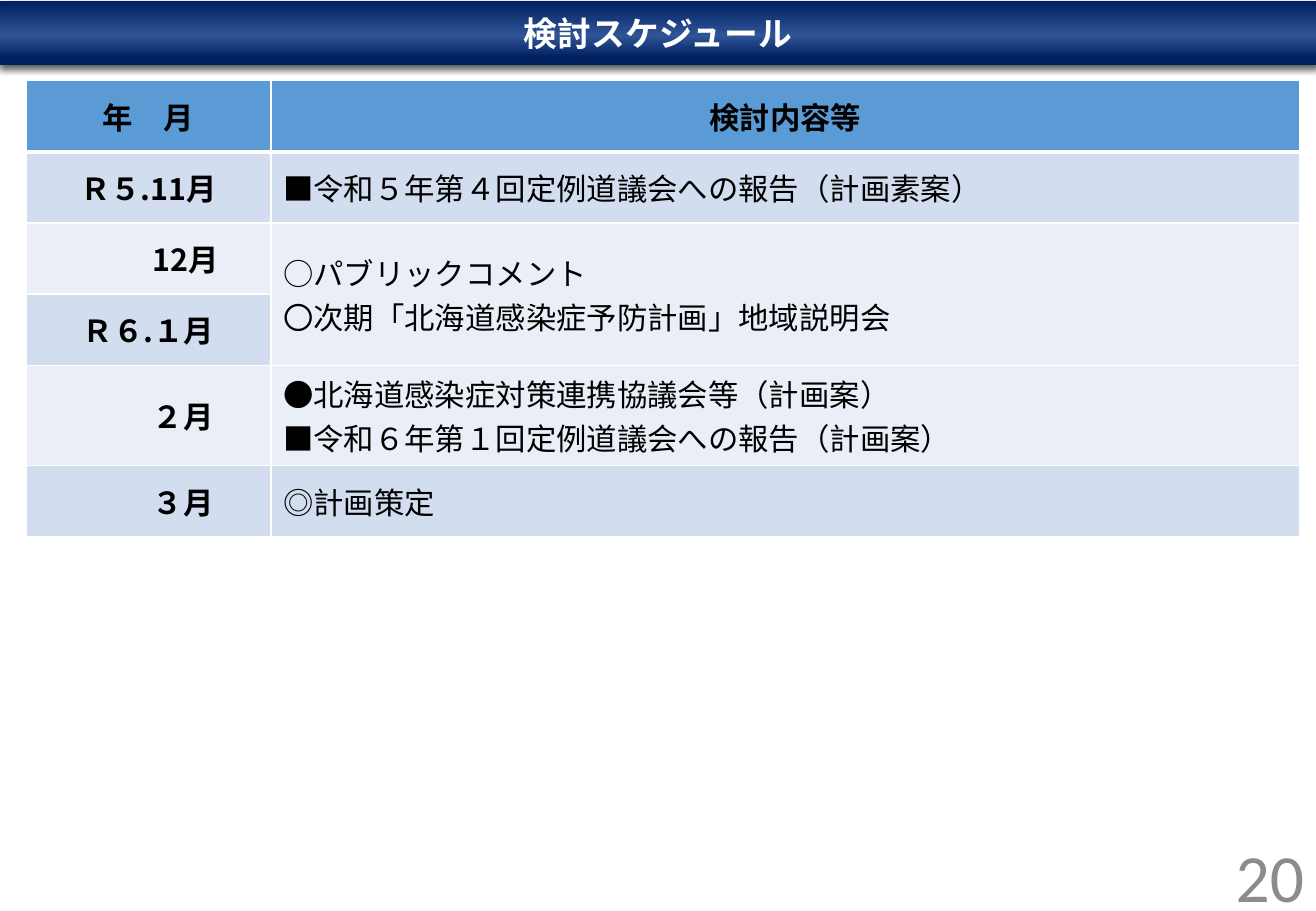
import pptx
import pptx.util
import pptx.dml.color
import pptx.enum.text
import pptx.oxml
import pptx.oxml.ns

Pt = pptx.util.Pt
RGB = pptx.dml.color.RGBColor
ALIGN = pptx.enum.text.PP_ALIGN
MIDDLE = pptx.enum.text.MSO_ANCHOR.MIDDLE

BLACK = RGB(0x00, 0x00, 0x00)
WHITE = RGB(0xFF, 0xFF, 0xFF)
GREY = RGB(0x8C, 0x8C, 0x8C)
NAVY = RGB(0x00, 0x20, 0x60)
BLUE = RGB(0x2F, 0x55, 0x97)
HEAD = RGB(0x5B, 0x9B, 0xD5)
DARK = RGB(0xD2, 0xDE, 0xEF)
LIGHT = RGB(0xEA, 0xEF, 0xF7)
NOTO = "Noto Sans CJK JP"
CALIBRI = "Calibri"
NS = pptx.oxml.ns.nsdecls("a")


def write(frame, lines, size, font, color, bold, align):
    frame.vertical_anchor = MIDDLE
    for i, line in enumerate(lines):
        para = frame.paragraphs[0] if i == 0 else frame.add_paragraph()
        para.alignment = align
        run = para.add_run()
        run.text = line
        run.font.size = Pt(size)
        run.font.name = font
        run.font.bold = bold
        run.font.color.rgb = color
        # Japanese glyphs
        run.font._element.get_or_add_latin().addnext(
            pptx.oxml.parse_xml(f'<a:ea {NS} typeface="{NOTO}"/>'))


def edge(cell, widths):
    props = cell._tc.get_or_add_tcPr()
    for i, (side, width) in enumerate(widths.items()):
        props.insert(i, pptx.oxml.parse_xml(
            f'<a:ln{side} {NS} w="{Pt(width)}"><a:solidFill>'
            f'<a:srgbClr val="{WHITE}"/></a:solidFill></a:ln{side}>'))


deck = pptx.Presentation()
deck.slide_width = Pt(780)
deck.slide_height = Pt(540)
slide = deck.slides.add_slide(deck.slide_layouts[5])

# Title bar
title = slide.shapes.title
title.left, title.top = Pt(0), Pt(0.7)
title.width, title.height = Pt(780), Pt(38)
title.text_frame.auto_size = pptx.enum.text.MSO_AUTO_SIZE.NONE
write(title.text_frame, ["検討スケジュール"], 20, NOTO, WHITE, True, ALIGN.CENTER)
stops = "".join(
    f'<a:gs pos="{place * 1000}"><a:srgbClr val="{color}"/></a:gs>'
    for place, color in [(0, NAVY), (54, BLUE), (88, NAVY)])
look = title._element.spPr
look.append(pptx.oxml.parse_xml(
    f'<a:prstGeom {NS} prst="rect"><a:avLst/></a:prstGeom>'))
look.append(pptx.oxml.parse_xml(
    f'<a:gradFill {NS} rotWithShape="1"><a:gsLst>{stops}</a:gsLst>'
    '<a:lin ang="5400000" scaled="0"/></a:gradFill>'))
look.append(pptx.oxml.parse_xml(
    f'<a:effectLst {NS}><a:outerShdw blurRad="{Pt(4.5)}" dist="{Pt(1.5)}" '
    f'dir="5400000" rotWithShape="0"><a:srgbClr val="{BLACK}">'
    '<a:alpha val="63000"/></a:srgbClr></a:outerShdw></a:effectLst>'))

# Schedule: month, left shift of the month, contents, fill
rows = [
    ("年　月", 0, ["検討内容等"], HEAD),
    ("Ｒ５.11月", 0, ["■令和５年第４回定例道議会への報告（計画素案）"], DARK),
    ("12月", 44, ["○パブリックコメント",
                 "〇次期「北海道感染症予防計画」地域説明会"], LIGHT),
    ("Ｒ６.１月", 0, [], DARK),
    ("２月", 41, ["●北海道感染症対策連携協議会等（計画案）",
                "■令和６年第１回定例道議会への報告（計画案）"], LIGHT),
    ("３月", 41, ["◎計画策定"], DARK),
]
high = 42.2
table = slide.shapes.add_table(
    len(rows), 2, Pt(15.4), Pt(47.8), Pt(755), Pt(high * len(rows))).table
table.columns[0].width = Pt(145.2)
table.columns[1].width = Pt(609.8)
for r, (month, shift, items, fill) in enumerate(rows):
    table.rows[r].height = Pt(high)
    left, right = table.cell(r, 0), table.cell(r, 1)
    for cell in (left, right):
        cell.vertical_anchor = MIDDLE
        cell.fill.solid()
        cell.fill.fore_color.rgb = fill
        edge(cell, {"L": 1, "R": 1, "T": 3 if r == 1 else 1,
                    "B": 3 if r == 0 else 1})
    left.margin_left = Pt(7.2 + shift)
    write(left.text_frame, [month], 18, NOTO, BLACK, True, ALIGN.CENTER)
    if r == 0:
        write(right.text_frame, items, 18, NOTO, BLACK, True, ALIGN.CENTER)
    else:
        write(right.text_frame, items, 18, CALIBRI, BLACK, False, ALIGN.LEFT)
table.cell(2, 1).merge(table.cell(3, 1))

# Page number
page = slide.shapes.add_textbox(Pt(604.8), Pt(491), Pt(175.2), Pt(55.4))
page.text_frame.word_wrap = True
write(page.text_frame, ["20"], 40, CALIBRI, GREY, False, ALIGN.RIGHT)

deck.save("out.pptx")
